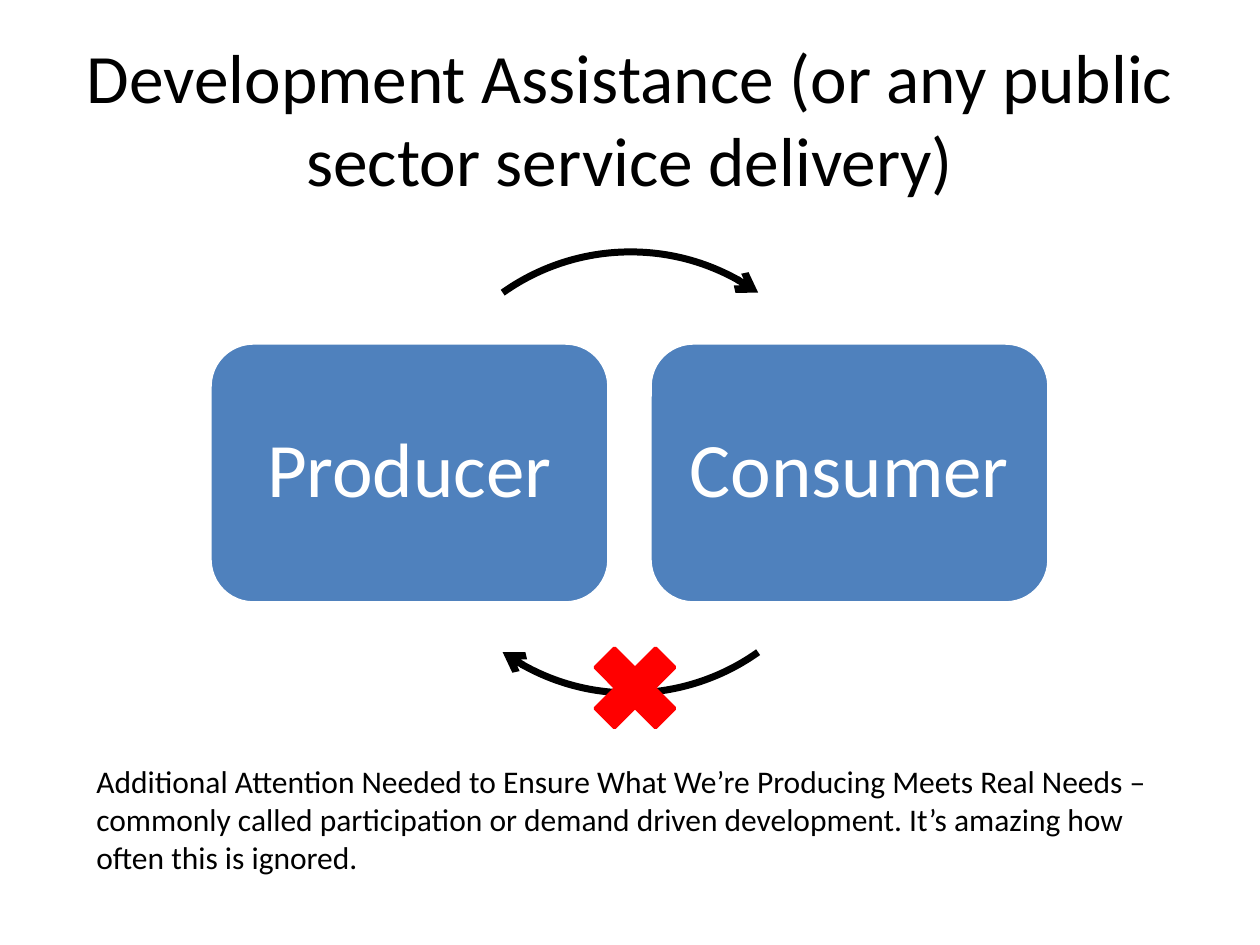
from dataclasses import dataclass

from lxml.etree import SubElement
from pptx import Presentation
from pptx.dml.color import RGBColor
from pptx.enum.shapes import MSO_SHAPE as Shape
from pptx.enum.text import MSO_ANCHOR as Anchor, PP_ALIGN as Align
from pptx.oxml.ns import qn
from pptx.util import Emu, Pt

EMU_PER_PX = 914400 / 126


@dataclass(frozen=True)
class Theme:
    font: str = "Calibri"
    text: str = "000000"
    light: str = "FFFFFF"
    box: str = "4F81BD"
    cross: str = "FF0000"
    title_size: float = 39.6
    box_size: int = 44
    note_size: int = 18
    outline: int = 2
    arrow: int = 4


THEME = Theme()


def px(n):
    return Emu(round(n * EMU_PER_PX))


def rgb(color):
    return RGBColor.from_string(color)


def write(sp, text, *, size, color=THEME.text, align=Align.LEFT,
          anchor=Anchor.TOP, spacing=None, inset=None):
    tf = sp.text_frame
    tf.word_wrap = True
    tf.vertical_anchor = anchor
    if inset is not None:
        tf.margin_left = tf.margin_right = px(inset)
        tf.margin_top = tf.margin_bottom = px(inset)
    p = tf.paragraphs[0]
    p.alignment = align
    p.line_spacing = spacing
    r = p.add_run()
    r.text = text
    r.font.name = THEME.font
    r.font.size = Pt(size)
    r.font.color.rgb = rgb(color)


def add_shape(s, kind, box, *, line, width, fill=None):
    sp = s.shapes.add_shape(kind, *map(px, box))
    sp.shadow.inherit = False
    if fill:
        sp.fill.solid()
        sp.fill.fore_color.rgb = rgb(fill)
    else:
        sp.fill.background()
    sp.line.color.rgb = rgb(line)
    sp.line.width = Pt(width)
    return sp


def add_role(s, name, left):
    sp = add_shape(s, Shape.ROUNDED_RECTANGLE, (left, 343, 399, 260),
                   fill=THEME.box, line=THEME.light, width=THEME.outline)
    write(sp, name, size=THEME.box_size, color=THEME.light, align=Align.CENTER,
          anchor=Anchor.MIDDLE, spacing=0.9, inset=15)


def add_arc_arrow(s, start, end):
    """Clockwise arc between two angles in degrees, with an arrowhead at its end."""
    sp = add_shape(s, Shape.ARC, (410, 252, 441, 441),
                   line=THEME.text, width=THEME.arrow)
    for i, angle in enumerate((start, end)):
        sp.adjustments[i] = angle * 0.6  # 60000ths of a degree over 100000
    ln = sp.element.spPr.find(qn("a:ln"))
    SubElement(ln, qn("a:tailEnd"), type="arrow")


def main():
    prs = Presentation()
    prs.slide_width, prs.slide_height = px(1260), px(945)
    s = prs.slides.add_slide(prs.slide_layouts[5])

    title = s.shapes.title
    title.left, title.top, title.width, title.height = map(px, (63, 38, 1134, 158))
    write(title, "Development Assistance (or any public sector service delivery)",
          size=THEME.title_size, align=Align.CENTER, anchor=Anchor.MIDDLE)

    add_role(s, "Producer", 210)
    add_arc_arrow(s, 234.6, 305.4)
    add_role(s, "Consumer", 650)
    add_arc_arrow(s, 54.6, 125.4)
    add_shape(s, Shape.MATH_MULTIPLY, (577, 630, 116, 116),
              fill=THEME.cross, line=THEME.cross, width=THEME.outline)

    note = s.shapes.add_textbox(*map(px, (84, 756, 1081, 127)))
    write(note, "Additional Attention Needed to Ensure What We’re Producing Meets "
                "Real Needs – commonly called participation or demand driven "
                "development. It’s amazing how often this is ignored.",
          size=THEME.note_size)

    prs.save("out.pptx")


if __name__ == "__main__":
    main()
